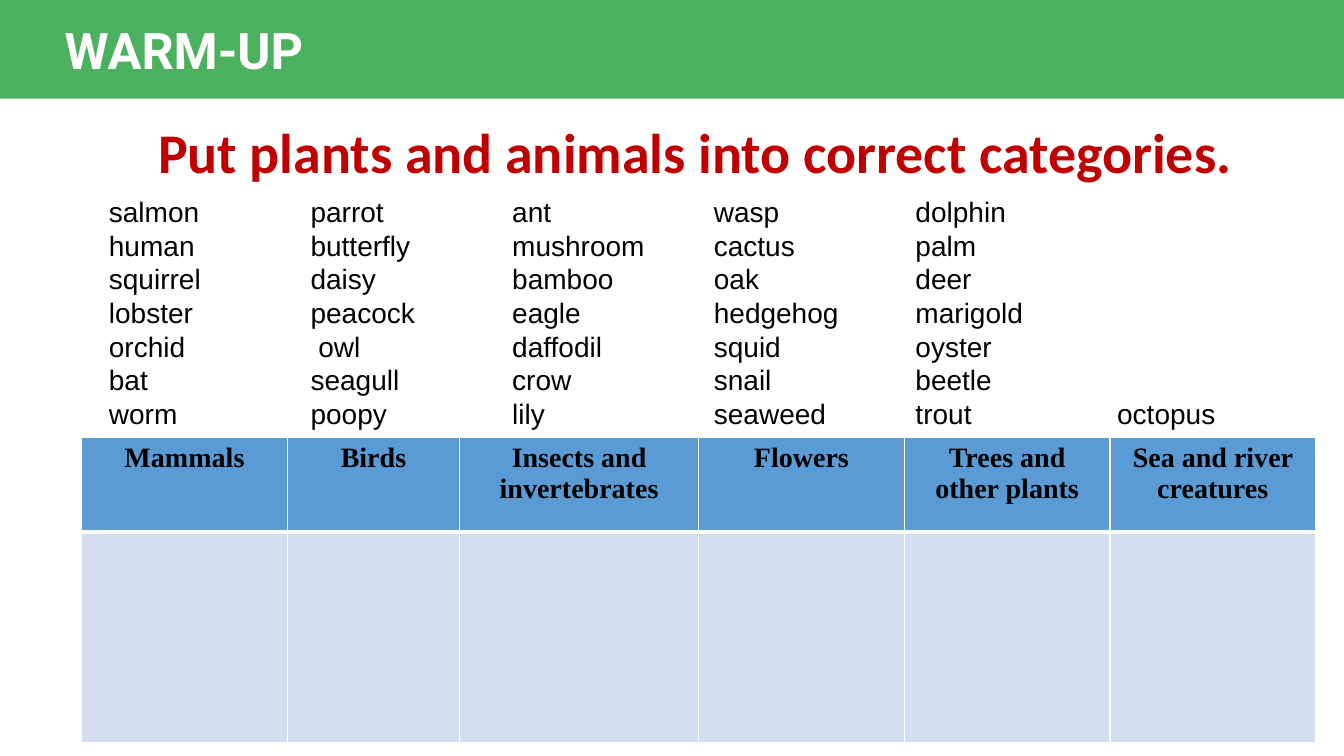
from dataclasses import dataclass

import pptx
import pptx.dml.color
import pptx.enum.shapes
import pptx.enum.text
import pptx.oxml.ns
import pptx.util
from lxml import etree

Inches = pptx.util.Inches
Pt = pptx.util.Pt
ALIGN = pptx.enum.text.PP_ALIGN


@dataclass(frozen=True)
class Theme:
    banner: str = "4CB15F"
    white: str = "FFFFFF"
    instruction: str = "C00000"
    ink: str = "000000"
    header_fill: str = "5B9BD5"
    answer_fill: str = "D2DEEF"
    title_size: int = 36
    instruction_size: int = 40
    body_size: int = 20


THEME = Theme()

WORD_ROWS = [
    ["salmon", "parrot", "ant", "wasp", "dolphin"],
    ["human", "butterfly", "mushroom", "cactus", "palm"],
    ["squirrel", "daisy", "bamboo", "oak", "deer"],
    ["lobster", "peacock", "eagle", "hedgehog", "marigold"],
    ["orchid", " owl", "daffodil", "squid", "oyster"],
    ["bat", "seagull", "crow", "snail", "beetle"],
    ["worm", "poopy", "lily", "seaweed", "trout", "octopus"],
]
CATEGORIES = ["Mammals", "Birds", "Insects and invertebrates", "Flowers",
              "Trees and other plants", "Sea and river creatures"]
CATEGORY_WIDTHS = [2.04, 1.71, 2.37, 2.04, 2.04, 2.04]
ROW_HEIGHTS = [0.94, 2.09]


def rgb(color):
    return pptx.dml.color.RGBColor.from_string(color)


def add_xml(parent, tag, **attributes):
    return etree.SubElement(parent, pptx.oxml.ns.qn(tag), attributes)


def write(frame, text, *, font, size, color, bold=False, align=ALIGN.LEFT):
    """Fill a text frame, one paragraph for each line of text."""
    frame.text = text
    frame.word_wrap = True
    for paragraph in frame.paragraphs:
        paragraph.alignment = align
        for run in paragraph.runs:
            run.font.name = font
            run.font.size = Pt(size)
            run.font.bold = bold
            run.font.color.rgb = rgb(color)


def place(shape, left, top, width, height):
    shape.left, shape.top = Inches(left), Inches(top)
    shape.width, shape.height = Inches(width), Inches(height)


def build_banner(slide, left, top, width, height):
    band = slide.shapes.add_shape(
        pptx.enum.shapes.MSO_SHAPE.RECTANGLE,
        Inches(left), Inches(top), Inches(width), Inches(height))
    band.shadow.inherit = False
    band.fill.solid()
    band.fill.fore_color.rgb = rgb(THEME.banner)
    band.line.fill.background()
    heading = slide.shapes.title
    place(heading, left + 0.54, top + 0.14, 5, 0.71)
    write(heading.text_frame, "WARM-UP", font="Roboto", size=THEME.title_size,
          color=THEME.white, bold=True)
    heading.text_frame.vertical_anchor = pptx.enum.text.MSO_ANCHOR.TOP
    heading.text_frame.auto_size = pptx.enum.text.MSO_AUTO_SIZE.NONE
    band._element.addnext(heading._element)  # heading in front of the band


def build_instruction(slide, left, top, width, height):
    instruction = slide.shapes.add_textbox(
        Inches(left), Inches(top), Inches(width), Inches(height))
    write(instruction.text_frame,
          "Put plants and animals into correct categories.", font="Calibri",
          size=THEME.instruction_size, color=THEME.instruction, bold=True)


def build_word_bank(slide, left, top, width, height):
    """Words in columns two inches apart, held by the default tab size."""
    bank = slide.placeholders[1]
    place(bank, left, top, width, height)
    frame = bank.text_frame
    write(frame, "\n".join("\t".join(row) for row in WORD_ROWS),
          font="Arial", size=THEME.body_size, color=THEME.ink)
    frame.auto_size = pptx.enum.text.MSO_AUTO_SIZE.NONE
    for paragraph in frame.paragraphs:
        paragraph.space_before = Pt(0)
        paragraph.line_spacing = Pt(24)
        properties = paragraph._p.get_or_add_pPr()
        properties.set("marL", "0")
        properties.set("indent", "0")
        properties.set("defTabSz", str(Inches(2)))
        add_xml(properties, "a:buNone")


def style_cell(cell, fill, top_line, bottom_line):
    edges = {"a:lnL": 1, "a:lnR": 1, "a:lnT": top_line, "a:lnB": bottom_line}
    for edge, points in edges.items():
        line = add_xml(cell._tc.get_or_add_tcPr(), edge, w=str(Pt(points)))
        add_xml(add_xml(line, "a:solidFill"), "a:srgbClr", val=THEME.white)
    cell.fill.solid()
    cell.fill.fore_color.rgb = rgb(fill)


def build_category_table(slide, left, top, width, height):
    table = slide.shapes.add_table(
        len(ROW_HEIGHTS), len(CATEGORIES),
        Inches(left), Inches(top), Inches(width), Inches(height)).table
    for row, row_height in zip(table.rows, ROW_HEIGHTS):
        row.height = Inches(row_height)
    for index, category in enumerate(CATEGORIES):
        table.columns[index].width = Inches(CATEGORY_WIDTHS[index])
        header, answer = table.cell(0, index), table.cell(1, index)
        write(header.text_frame, category, font="Times New Roman",
              size=THEME.body_size, color=THEME.ink, bold=True,
              align=ALIGN.CENTER)
        style_cell(header, THEME.header_fill, 1, 3)
        style_cell(answer, THEME.answer_fill, 3, 1)


def main():
    deck = pptx.Presentation()
    deck.slide_width, deck.slide_height = Inches(13.33), Inches(7.5)
    slide = deck.slides.add_slide(deck.slide_layouts[1])
    build_banner(slide, 0, 0, 13.33, 0.98)
    build_instruction(slide, 1.47, 1.12, 11.07, 0.77)
    build_word_bank(slide, 0.98, 1.88, 11.81, 2.46)
    build_category_table(slide, 0.81, 4.34, sum(CATEGORY_WIDTHS),
                         sum(ROW_HEIGHTS))
    deck.save("out.pptx")


if __name__ == "__main__":
    main()
